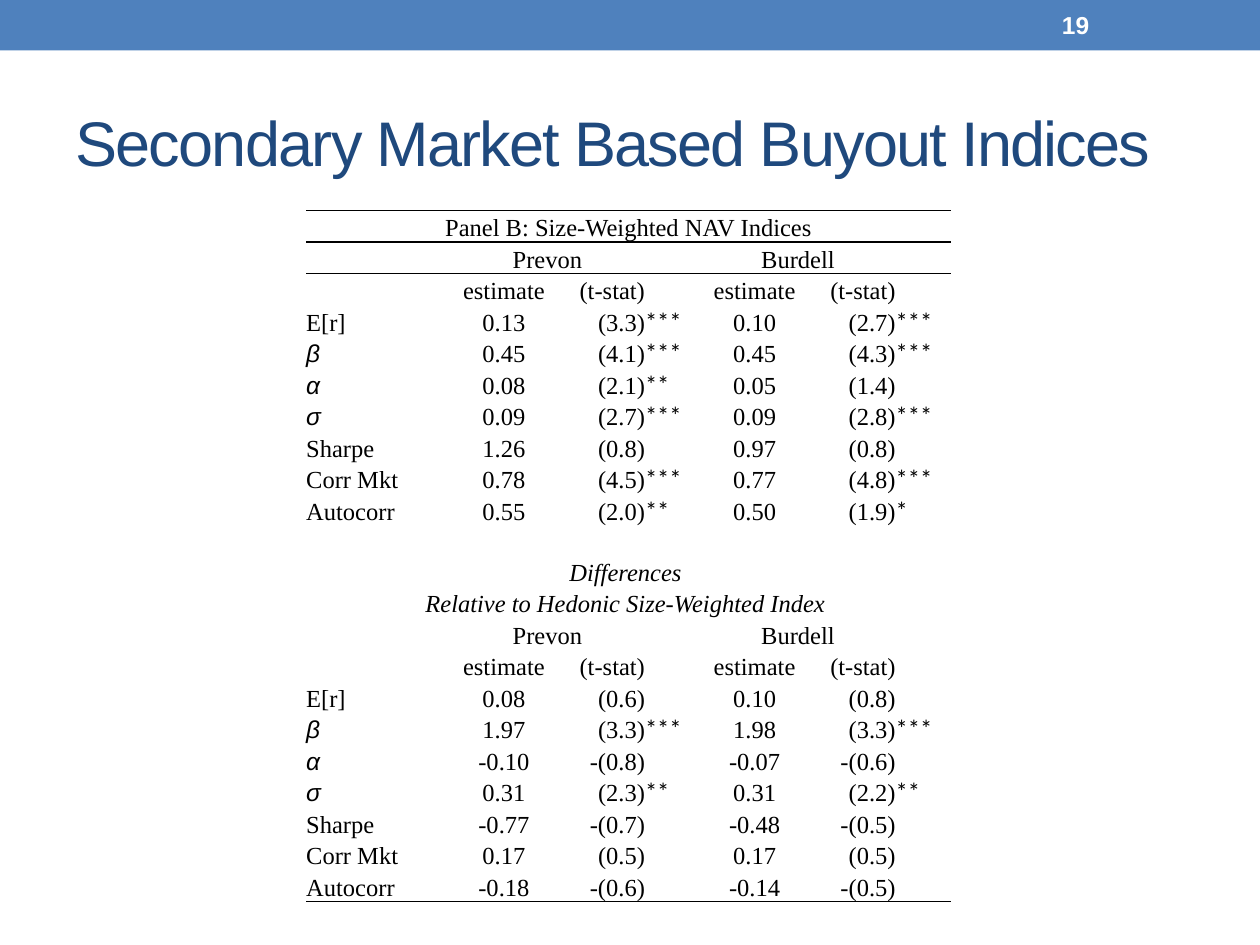
from dataclasses import dataclass

from lxml.etree import SubElement
from pptx import Presentation
from pptx.dml.color import RGBColor
from pptx.enum.shapes import MSO_SHAPE
from pptx.enum.text import MSO_ANCHOR, PP_ALIGN
from pptx.oxml.ns import qn
from pptx.util import Inches, Pt


@dataclass(frozen=True)
class Theme:
    bar: str = "4F81BD"
    title: str = "1F497D"
    ink: str = "000000"
    white: str = "FFFFFF"
    sans: str = "Arial"
    serif: str = "Times New Roman"
    stars: str = "Calibri"
    title_size: int = 36
    body_size: int = 14
    rule: int = 1
    leading: float = 1.07
    plain_table: str = "{2D5ABB26-0587-4C30-8999-92F81FD0307C}"


LEFT, CENTER, RIGHT = PP_ALIGN.LEFT, PP_ALIGN.CENTER, PP_ALIGN.RIGHT
COLUMNS = [1.14] + [0.86, 0.69, 0.44] * 2
COLUMN_ALIGN = [LEFT] + [CENTER, RIGHT, LEFT] * 2
STAR_COLUMNS = (3, 6)
GREEK = "βασ"

# Table content: one list per row; a single entry spans the full width
HEADINGS = [
    ["", "Prevon", "", "", "Burdell", "", ""],
    ["", "estimate", "(t-stat)", "", "estimate", "(t-stat)", ""],
]
INDICES = [
    ["E[r]", "0.13", "(3.3)", "***", "0.10", "(2.7)", "***"],
    ["β", "0.45", "(4.1)", "***", "0.45", "(4.3)", "***"],
    ["α", "0.08", "(2.1)", "**", "0.05", "(1.4)", ""],
    ["σ", "0.09", "(2.7)", "***", "0.09", "(2.8)", "***"],
    ["Sharpe", "1.26", "(0.8)", "", "0.97", "(0.8)", ""],
    ["Corr Mkt", "0.78", "(4.5)", "***", "0.77", "(4.8)", "***"],
    ["Autocorr", "0.55", "(2.0)", "**", "0.50", "(1.9)", "*"],
]
DIFFERENCES = [
    ["E[r]", "0.08", "(0.6)", "", "0.10", "(0.8)", ""],
    ["β", "1.97", "(3.3)", "***", "1.98", "(3.3)", "***"],
    ["α", "-0.10", "-(0.8)", "", "-0.07", "-(0.6)", ""],
    ["σ", "0.31", "(2.3)", "**", "0.31", "(2.2)", "**"],
    ["Sharpe", "-0.77", "-(0.7)", "", "-0.48", "-(0.5)", ""],
    ["Corr Mkt", "0.17", "(0.5)", "", "0.17", "(0.5)", ""],
    ["Autocorr", "-0.18", "-(0.6)", "", "-0.14", "-(0.5)", ""],
]
ROWS = [
    ["Panel B: Size-Weighted NAV Indices"],
    *HEADINGS,
    *INDICES,
    [""] * len(COLUMNS),
    ["Differences "],
    ["Relative to Hedonic Size-Weighted Index "],
    *HEADINGS,
    *DIFFERENCES,
]


def write(tf, text, *, font, size, color, bold=False, italic=False,
          align=LEFT, leading=None, tracking=None):
    p = tf.paragraphs[0]
    p.alignment = align
    if leading:
        p.line_spacing = leading
    if not text:
        # An empty cell still needs its type size to keep the row low
        SubElement(p._p, qn("a:endParaRPr"), sz=str(size * 100))
        return
    r = p.add_run()
    r.text = text
    f = r.font
    f.name, f.size, f.bold, f.italic = font, Pt(size), bold, italic
    f.color.rgb = RGBColor.from_string(color)
    if tracking:
        r._r.get_or_add_rPr().set("spc", str(tracking * 100))


class Deck:
    def __init__(self, prs, theme):
        self.theme = theme
        self.s = prs.slides.add_slide(prs.slide_layouts[6])

    def bar(self, x, y, w, h):
        sp = self.s.shapes.add_shape(
            MSO_SHAPE.RECTANGLE, Inches(x), Inches(y), Inches(w), Inches(h))
        sp.shadow.inherit = False
        sp.fill.solid()
        sp.fill.fore_color.rgb = RGBColor.from_string(self.theme.bar)
        sp.line.fill.background()

    def text(self, text, x, y, w, h, **fmt):
        tf = self.s.shapes.add_textbox(
            Inches(x), Inches(y), Inches(w), Inches(h)).text_frame
        tf.word_wrap = True
        tf.vertical_anchor = MSO_ANCHOR.MIDDLE
        write(tf, text, font=self.theme.sans, **fmt)

    def rule(self, cell, side):
        ln = SubElement(cell._tc.get_or_add_tcPr(), qn(f"a:ln{side}"),
                        w=str(Pt(self.theme.rule)))
        fill = SubElement(ln, qn("a:solidFill"))
        SubElement(fill, qn("a:srgbClr"), val=self.theme.ink)

    def cell(self, cell, text, sides="", **fmt):
        cell.margin_left = cell.margin_right = 0
        cell.margin_top = cell.margin_bottom = 0
        cell.vertical_anchor = MSO_ANCHOR.BOTTOM
        for side in sides:
            self.rule(cell, side)
        cell.fill.background()
        t = self.theme
        write(cell.text_frame, text, size=t.body_size, color=t.ink,
              leading=t.leading, **fmt)

    def table(self, rows, x, y):
        t = self.theme
        last = len(rows) - 1
        heights = [0.25 if i in (0, last) else 0.23 for i in range(len(rows))]
        tbl = self.s.shapes.add_table(
            len(rows), len(COLUMNS), Inches(x), Inches(y),
            Inches(sum(COLUMNS)), Inches(sum(heights))).table
        tbl.first_row = tbl.horz_banding = False
        tbl._tbl.tblPr.find(qn("a:tableStyleId")).text = t.plain_table
        for col, width in zip(tbl.columns, COLUMNS):
            col.width = Inches(width)

        for i, row in enumerate(rows):
            tbl.rows[i].height = Inches(heights[i])
            sides = {0: "TB", 1: "T", last: "B"}.get(i, "")
            spanning = len(row) == 1
            heading = row[1:3] == HEADINGS[0][1:3]
            texts = row + [""] * (len(COLUMNS) - len(row))
            for j, text in enumerate(texts):
                greek = bool(text) and text in GREEK
                font = (t.sans if greek
                        else t.stars if j in STAR_COLUMNS else t.serif)
                self.cell(tbl.cell(i, j), text, sides, font=font,
                          italic=greek or (spanning and i > 0),
                          align=CENTER if spanning else COLUMN_ALIGN[j])
            if spanning:
                tbl.cell(i, 0).merge(tbl.cell(i, len(COLUMNS) - 1))
            elif heading and any(row):
                for j in (1, 4):
                    tbl.cell(i, j).merge(tbl.cell(i, j + 1))


def main():
    prs = Presentation()
    prs.slide_width, prs.slide_height = Inches(10), Inches(7.5)
    theme = Theme()
    deck = Deck(prs, theme)

    # Top bar with slide number
    deck.bar(0, 0, 10, 0.4)
    deck.text("19", 8.33, 0.02, 1.17, 0.36, size=theme.body_size,
              color=theme.white, bold=True)

    # Title
    deck.text("Secondary Market Based Buyout Indices", 0.5, 0.58, 9, 1.08,
              size=theme.title_size, color=theme.title, tracking=-1)

    # Results table
    deck.table(ROWS, 2.43, 1.67)
    prs.save("out.pptx")


if __name__ == "__main__":
    main()
